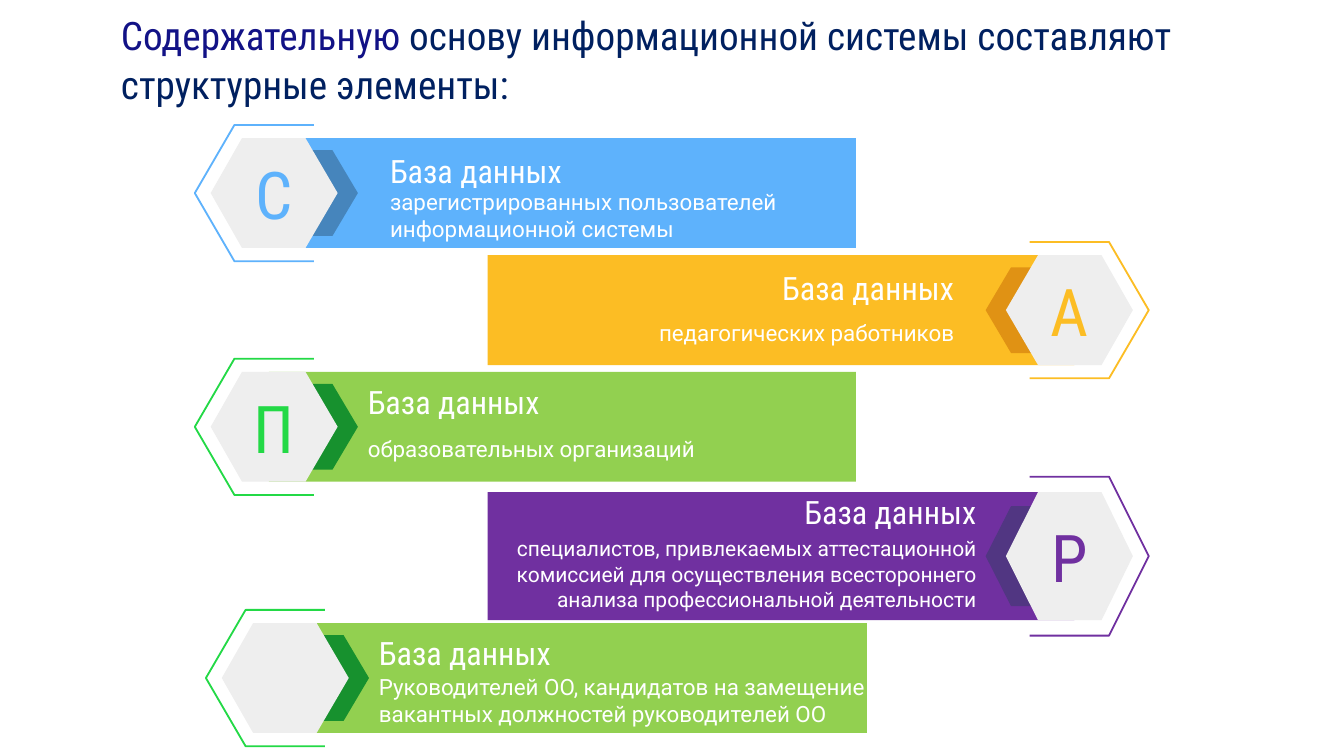
from pptx import Presentation
from pptx import util as u
from pptx.dml.color import RGBColor
from pptx.enum import shapes, text

COLORS = {
    "blue": "5EB2FC", "steel": "4685BC",
    "amber": "FCBD24", "orange": "E09214",
    "lime": "92D050", "green": "23D946", "forest": "17912E",
    "purple": "7030A0", "indigo": "513682",
    "gray": "EEEEEE", "white": "FFFFFF",
    "title_accent": "121286", "title": "002060",
}
TITLE = [
    ("Содержательную", "title_accent"),
    (" основу информационной системы составляют структурные элементы:", "title"),
]
HEADING = "База данных"
ROWS = [
    dict(letter="С", body="зарегистрированных пользователей информационной системы",
         tip=5.31, side=1, top=3.48, height=2.77, bar="blue", accent="blue", dark="steel",
         heading_box=(9.58, 3.68, 12.01, 1.24), body_box=(9.58, 4.8, 12.01, 1.24), size=16),
    dict(letter="А", body="педагогических работников",
         tip=28.55, side=-1, top=6.43, height=2.77, bar="amber", accent="amber", dark="orange",
         heading_box=(12.29, 6.63, 12.01, 1.24), body_box=(12.29, 7.75, 12.01, 1.24), size=16),
    dict(letter="П", body="образовательных организаций",
         tip=5.31, side=1, top=9.37, height=2.77, bar="lime", accent="green", dark="forest",
         heading_box=(9.02, 9.5, 12.01, 1.24), body_box=(9.02, 10.69, 13.89, 1.24), size=16),
    dict(letter="Р", body="специалистов, привлекаемых аттестационной комиссией для осуществления "
                          "всестороннего анализа профессиональной деятельности",
         tip=28.55, side=-1, top=12.4, height=3.23, bar="purple", accent="purple", dark="indigo",
         heading_box=(12.85, 12.17, 12.01, 1.47), body_box=(11.23, 13.72, 13.64, 1.47), size=15),
    dict(letter="", body="Руководителей ОО, кандидатов на замещение вакантных должностей руководителей ОО",
         tip=5.59, side=1, top=15.7, height=2.77, bar="lime", accent="green", dark="forest",
         heading_box=(9.3, 15.82, 12.01, 1.24), body_box=(9.3, 17.02, 13.89, 1.24), size=16),
]
BAR_START, BAR_END = 1.47, 16.26
CHEVRON = [(2.34, 0.11), (2.34, 0.89), (3.07, 0.89), (3.71, 0.5), (3.07, 0.11)]
OUTLINE = [(2.6, -0.12), (0.6, -0.12), (-0.4, 0.5), (0.6, 1.12), (2.6, 1.12)]
HEXAGON = [(0.79, 0), (0, 0.5), (0.79, 1), (2.39, 1), (3.2, 0.5), (2.39, 0)]


def rgb(name):
    return RGBColor.from_string(COLORS[name])


def paint(shape, color):
    shape.shadow.inherit = False
    shape.fill.solid()
    shape.fill.fore_color.rgb = rgb(color)
    shape.line.fill.background()


def draw_path(slide, row, offsets, closed=True):
    points = [(u.Cm(row["tip"] + row["side"] * x), u.Cm(row["top"] + row["height"] * y))
              for x, y in offsets]
    builder = slide.shapes.build_freeform(*points[0])
    builder.add_line_segments(points[1:], close=closed)
    return builder.convert_to_shape()


def write(shape, runs, size, font, align, inset=0.25, spacing=1.0):
    frame = shape.text_frame
    margin = u.Cm(inset)
    frame_format = dict(word_wrap=True, vertical_anchor=text.MSO_ANCHOR.MIDDLE,
                        margin_left=margin, margin_right=margin,
                        margin_top=margin, margin_bottom=margin)
    for name, value in frame_format.items():
        setattr(frame, name, value)
    paragraph = frame.paragraphs[0]
    for name, value in dict(alignment=align, line_spacing=spacing).items():
        setattr(paragraph, name, value)
    for words, color in runs:
        run = paragraph.add_run()
        run.text = words
        for name, value in dict(size=u.Pt(size), name=font).items():
            setattr(run.font, name, value)
        run.font.color.rgb = rgb(color)


def add_text(slide, box, *args, **options):
    write(slide.shapes.add_textbox(*map(u.Cm, box)), *args, **options)


def add_row(slide, row):
    ends = [row["tip"] + row["side"] * x for x in (BAR_START, BAR_END)]
    bar = slide.shapes.add_shape(
        shapes.MSO_SHAPE.RECTANGLE, u.Cm(min(ends)), u.Cm(row["top"]),
        u.Cm(BAR_END - BAR_START), u.Cm(row["height"]))
    paint(bar, row["bar"])
    paint(draw_path(slide, row, CHEVRON), row["dark"])

    outline = draw_path(slide, row, OUTLINE, closed=False)
    outline.shadow.inherit = False
    outline.fill.background()
    outline.line.color.rgb = rgb(row["accent"])
    outline.line.width = u.Pt(1.3)

    hexagon = draw_path(slide, row, HEXAGON)
    paint(hexagon, "gray")
    if row["letter"]:
        write(hexagon, [(row["letter"], row["accent"])], 47, "Roboto Condensed", text.PP_ALIGN.CENTER)

    align = text.PP_ALIGN.LEFT if row["side"] > 0 else text.PP_ALIGN.RIGHT
    add_text(slide, row["heading_box"], [(HEADING, "white")], 23, "Roboto Condensed", align)
    add_text(slide, row["body_box"], [(row["body"], "white")], row["size"], "Roboto", align)


def main():
    presentation = Presentation()
    presentation.slide_width = u.Cm(33.87)
    presentation.slide_height = u.Cm(19.05)
    slide = presentation.slides.add_slide(presentation.slide_layouts[6])
    add_text(slide, (2.72, 0.58, 28.6, 1.78), TITLE, 28, "Roboto Condensed",
             text.PP_ALIGN.LEFT, inset=0.33, spacing=1.05)
    for row in ROWS:
        add_row(slide, row)
    presentation.save("out.pptx")


if __name__ == "__main__":
    main()
